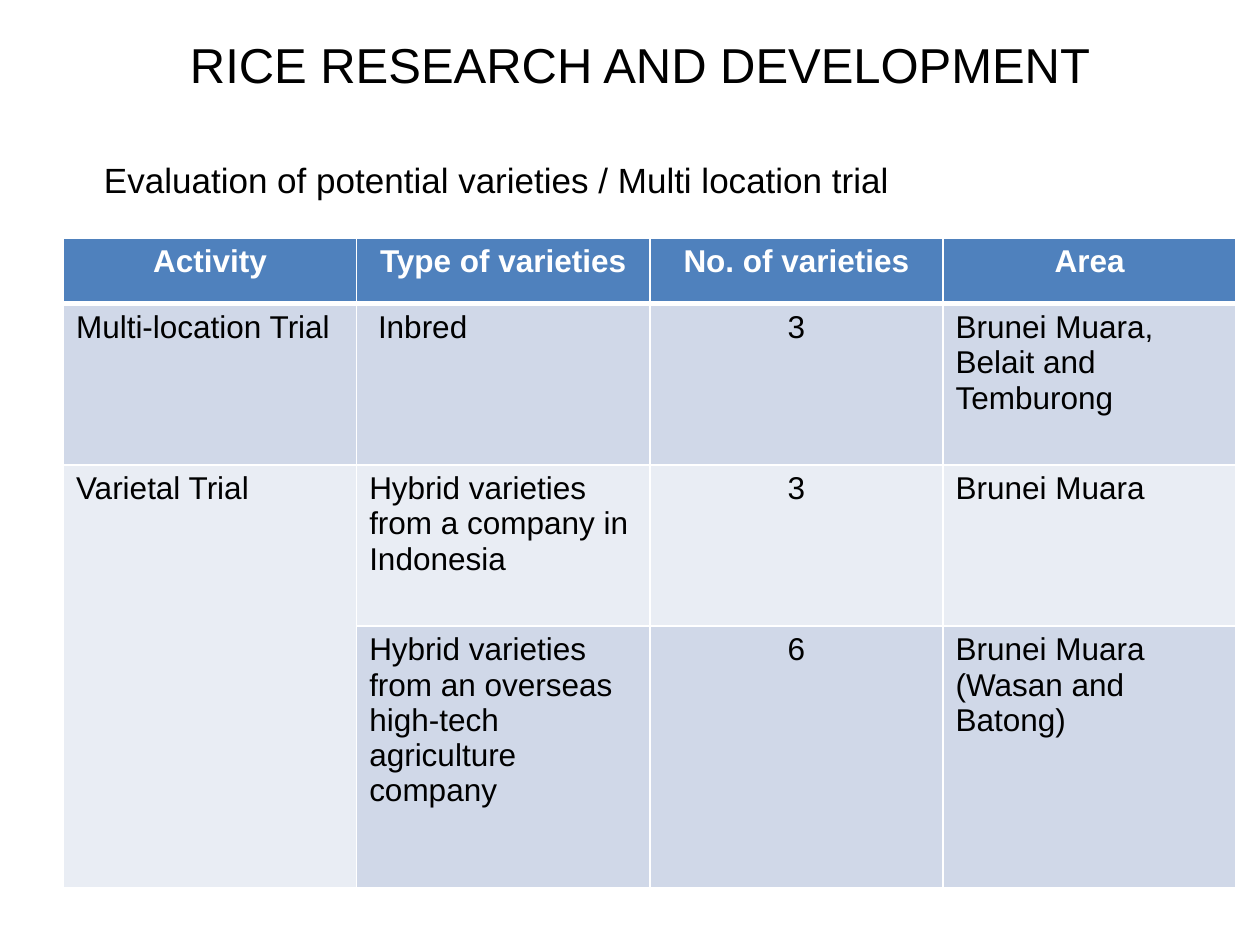
"""Build the rice research and development slide."""
import pptx
import pptx.dml.color
import pptx.enum.text
import pptx.oxml
import pptx.oxml.ns
import pptx.util

Cm, Pt = pptx.util.Cm, pptx.util.Pt
RGBColor = pptx.dml.color.RGBColor
PP_ALIGN = pptx.enum.text.PP_ALIGN
MSO_ANCHOR = pptx.enum.text.MSO_ANCHOR

BLACK = RGBColor(0x00, 0x00, 0x00)
WHITE = RGBColor(0xFF, 0xFF, 0xFF)
BLUE = RGBColor(0x4F, 0x81, 0xBD)
BAND_DARK = RGBColor(0xD0, 0xD8, 0xE8)
BAND_LIGHT = RGBColor(0xE9, 0xED, 0xF4)

HEADER = ["Activity", "Type of varieties", "No. of varieties", "Area"]
TRIALS = [
    ["Multi-location Trial", "Inbred", "3", "Brunei Muara, Belait and Temburong"],
    ["Varietal Trial", "Hybrid varieties from a company in Indonesia", "3", "Brunei Muara"],
    ["", "Hybrid varieties from an overseas high-tech agriculture company", "6",
     "Brunei Muara (Wasan and Batong)"],
]
COL_WIDTH = 5.91
ROW_HEIGHTS = [1.32, 3.25, 3.25, 5.28]
COUNT_COL = 2


def write(tf, text, size=18, color=BLACK, bold=False, align=PP_ALIGN.LEFT, font="Arial"):
    p = tf.paragraphs[0]
    p.alignment = align
    r = p.add_run()
    r.text = text
    r.font.name = font
    r.font.size = Pt(size)
    r.font.bold = bold
    r.font.color.rgb = color


def set_border(cell, side, index, width):
    ln = pptx.oxml.parse_xml(
        f'<a:{side} {pptx.oxml.ns.nsdecls("a")} w="{Pt(width)}"><a:solidFill>'
        f'<a:srgbClr val="{WHITE}"/></a:solidFill></a:{side}>')
    cell._tc.get_or_add_tcPr().insert(index, ln)


class SlideBuilder:
    def __init__(self, prs):
        self.s = prs.slides.add_slide(prs.slide_layouts[5])

    def title(self, text, x, y, w, h):
        sp = self.s.shapes.title
        sp.left, sp.top, sp.width, sp.height = Cm(x), Cm(y), Cm(w), Cm(h)
        sp.text_frame.vertical_anchor = MSO_ANCHOR.MIDDLE
        write(sp.text_frame, text, size=28, align=PP_ALIGN.CENTER)

    def text(self, text, x, y, w, h):
        tf = self.s.shapes.add_textbox(Cm(x), Cm(y), Cm(w), Cm(h)).text_frame
        tf.word_wrap = True
        tf.margin_left = tf.margin_right = tf.margin_top = tf.margin_bottom = 0
        write(tf, text, size=20, align=PP_ALIGN.CENTER)

    def cell(self, cell, text, fill, header=False, align=PP_ALIGN.LEFT):
        cell.fill.solid()
        cell.fill.fore_color.rgb = fill
        for i, side in enumerate(["lnL", "lnR", "lnT", "lnB"]):
            set_border(cell, side, i, 3 if header and side == "lnB" else 1)
        if text:
            write(cell.text_frame, text, color=WHITE if header else BLACK,
                  bold=header, align=align)

    def table(self, header, rows, x, y):
        table = self.s.shapes.add_table(
            len(rows) + 1, len(header), Cm(x), Cm(y),
            Cm(COL_WIDTH * len(header)), Cm(sum(ROW_HEIGHTS))).table
        for col in table.columns:
            col.width = Cm(COL_WIDTH)
        for row, height in zip(table.rows, ROW_HEIGHTS):
            row.height = Cm(height)
        for j, text in enumerate(header):
            self.cell(table.cell(0, j), text, BLUE, header=True, align=PP_ALIGN.CENTER)
        for i, row in enumerate(rows, 1):
            for j, text in enumerate(row):
                fill = BAND_DARK if i % 2 and text else BAND_LIGHT
                align = PP_ALIGN.CENTER if j == COUNT_COL else PP_ALIGN.LEFT
                self.cell(table.cell(i, j), text, fill, align=align)
        return table


def main():
    prs = pptx.Presentation()
    prs.slide_width, prs.slide_height = Cm(25.4), Cm(19.05)
    slide = SlideBuilder(prs)
    slide.text("Evaluation of potential varieties / Multi location trial", 0.4, 3.2, 19.23, 0.86)
    slide.title("RICE RESEARCH AND DEVELOPMENT", 1.47, -0.3, 22.86, 3.18)
    table = slide.table(HEADER, TRIALS, 1.28, 4.8)
    table.cell(1, 1).margin_left = Cm(0.43)
    table.cell(2, 0).merge(table.cell(3, 0))
    prs.save("out.pptx")


if __name__ == "__main__":
    main()
